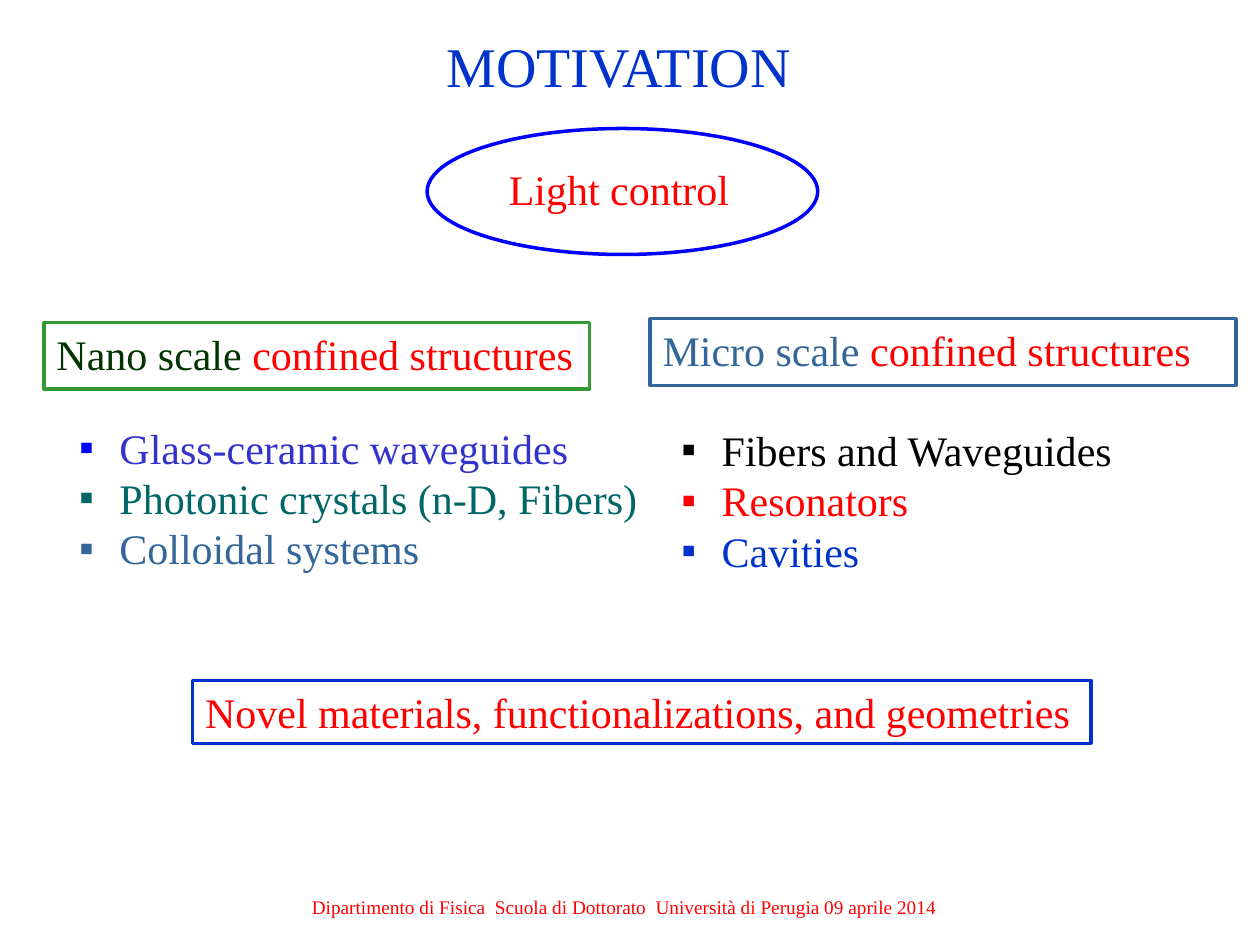
from lxml import etree
from pptx import Presentation
from pptx.dml.color import RGBColor
from pptx.enum.shapes import MSO_SHAPE
from pptx.enum.text import MSO_ANCHOR, PP_ALIGN
from pptx.oxml.ns import qn
from pptx.util import Inches, Pt

RECT, OVAL = MSO_SHAPE.RECTANGLE, MSO_SHAPE.OVAL
LEFT, CENTER = PP_ALIGN.LEFT, PP_ALIGN.CENTER
TOP = MSO_ANCHOR.TOP

COLORS = {
    "red": "FF0000", "blue": "0033CC", "bright": "0000FF",
    "violet": "3333CC", "teal": "006666", "steel": "336699",
    "green": "339933", "forest": "003300", "black": "000000",
}
FONT = "Times New Roman"
INDENT = Inches(0.32)


def color(name):
    return RGBColor.from_string(COLORS[name])


def write(para, runs, size=24, align=LEFT):
    """Fill a paragraph with (text, colour name) runs."""
    para.alignment = align
    for text, hue in runs:
        run = para.add_run()
        run.text = text
        style = {"name": FONT, "size": Pt(size)}
        for key, value in style.items():
            setattr(run.font, key, value)
        run.font.color.rgb = color(hue)


def add_text(slide, box, runs, size=24, align=LEFT):
    frame = slide.shapes.add_textbox(*map(Inches, box)).text_frame
    frame.word_wrap = True
    write(frame.paragraphs[0], runs, size, align)


def add_outline(slide, kind, box, hue):
    shape = slide.shapes.add_shape(kind, *map(Inches, box))
    shape.shadow.inherit = False
    shape.fill.background()
    shape.line.color.rgb = color(hue)
    shape.line.width = Pt(2)
    return shape


def add_frame(slide, box, hue, runs):
    """Draw a bordered rectangle with one line of text."""
    frame = add_outline(slide, RECT, box, hue).text_frame
    frame.word_wrap = True
    frame.vertical_anchor = TOP
    write(frame.paragraphs[0], runs)


def add_goal(slide, box):
    """Draw the ellipse with its label inside."""
    left, top, width, height = box
    add_outline(slide, OVAL, box, "bright")
    label = (left + 0.55, top + 0.23, width - 1.13, height / 2)
    add_text(slide, label, [("Light control", "red")])


def set_bullet(para, hue):
    props = para._p.get_or_add_pPr()
    props.set("marL", str(INDENT))
    props.set("indent", str(-INDENT))
    tint = etree.SubElement(props, qn("a:buClr"))
    etree.SubElement(tint, qn("a:srgbClr"), val=COLORS[hue])
    etree.SubElement(props, qn("a:buFont"), typeface=FONT)
    etree.SubElement(props, qn("a:buChar"), char="▪")


def add_list(slide, box, items):
    """Write a bulleted list of (text, text colour, bullet colour)."""
    frame = slide.shapes.add_textbox(*map(Inches, box)).text_frame
    frame.word_wrap = True
    for row, (text, hue, mark) in enumerate(items):
        para = frame.add_paragraph() if row else frame.paragraphs[0]
        set_bullet(para, mark)
        write(para, [(text, hue)])


def build(slide):
    add_text(slide, (0.98, 7.06, 7.95, 0.29), [(
        "Dipartimento di Fisica  Scuola di Dottorato  "
        "Università di Perugia 09 aprile 2014", "red")], 11, CENTER)
    add_text(slide, (1.25, 0.2, 7.32, 0.63), [("MOTIVATION", "blue")],
             32, CENTER)
    add_goal(slide, (3.39, 1.02, 3.1, 1))

    shared = ("confined structures", "red")
    add_frame(slide, (0.35, 2.56, 4.33, 0.53), "green",
              [("Nano scale ", "forest"), shared])
    add_frame(slide, (5.16, 2.53, 4.65, 0.53), "steel",
              [("Micro scale ", "steel"), shared])

    add_list(slide, (0.53, 3.3, 4.67, 1.31), [
        ("Glass-ceramic waveguides", "violet", "bright"),
        ("Photonic crystals (n-D, Fibers)", "teal", "teal"),
        ("Colloidal systems", "steel", "steel"),
    ])
    add_list(slide, (5.31, 3.32, 4.33, 1.31), [
        ("Fibers and Waveguides", "black", "black"),
        ("Resonators", "red", "red"),
        ("Cavities", "blue", "blue"),
    ])
    add_frame(slide, (1.53, 5.4, 7.13, 0.5), "blue", [
        ("Novel materials, functionalizations, and geometries", "red")])


def main():
    deck = Presentation()
    deck.slide_width, deck.slide_height = Inches(10), Inches(7.5)
    build(deck.slides.add_slide(deck.slide_layouts[6]))
    deck.save("out.pptx")


if __name__ == "__main__":
    main()
